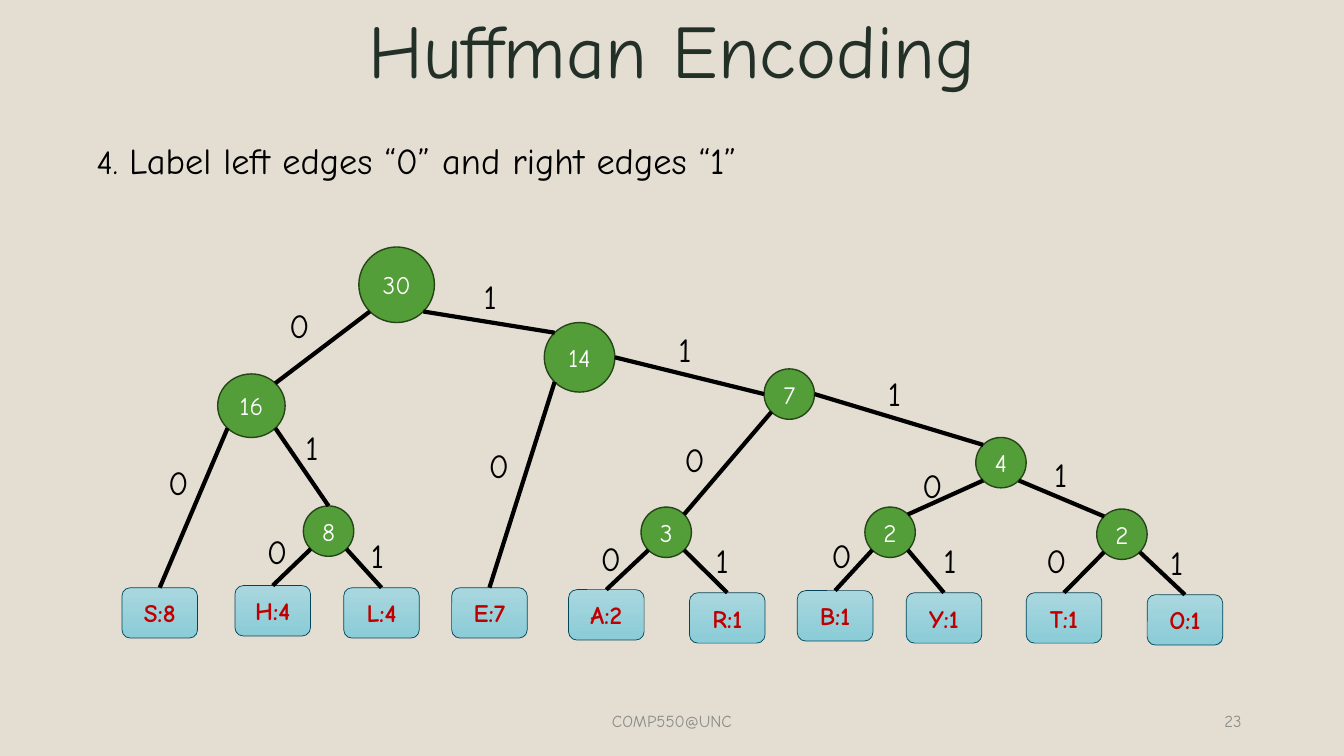
from lxml.etree import SubElement
from pptx import Presentation
from pptx.dml.color import RGBColor
from pptx.enum.shapes import MSO_CONNECTOR as Connector, MSO_SHAPE as Shape
from pptx.enum.text import MSO_ANCHOR as Anchor, PP_ALIGN as Align
from pptx.oxml.ns import qn
from pptx.util import Pt

FONT = "Comic Neue"
BACKGROUND = RGBColor(0xE3, 0xDE, 0xD1)
TITLE = RGBColor(0x22, 0x30, 0x28)
FOOTER = RGBColor(0x8C, 0x8C, 0x8C)
BLACK = RGBColor(0x00, 0x00, 0x00)
WHITE = RGBColor(0xFF, 0xFF, 0xFF)
GREEN = RGBColor(0x54, 0x9E, 0x39)
DARK_GREEN = RGBColor(0x25, 0x45, 0x19)
LEAF_TOP = RGBColor(0xAA, 0xD7, 0xDF)
LEAF_BOTTOM = RGBColor(0x8A, 0xCC, 0xD7)
LEAF_LINE = RGBColor(0x04, 0x44, 0x58)
RED = RGBColor(0xC0, 0x00, 0x00)

# Leaves: symbol with its count -> left, top
LEAVES = {
    "S:8": (87.1, 419.8), "H:4": (167.8, 418.3), "L:4": (245.5, 419.8),
    "E:7": (322.6, 419.8), "A:2": (406.1, 421.2), "R:1": (492.5, 423.4),
    "B:1": (569.5, 421.9), "Y:1": (647.3, 423.4), "T:1": (733, 423.4),
    "O:1": (819.4, 424.8),
}

# Inner nodes: merged symbols -> total, left, top, width, height
NODES = {
    "TO": ("2", 783.4, 363.6, 36, 36),
    "BY": ("2", 617.8, 362.2, 36, 36),
    "AR": ("3", 457.9, 362.2, 36, 36),
    "BYTO": ("4", 697, 312.5, 36, 36),
    "ARBYTO": ("7", 545.8, 263.5, 36, 36),
    "HL": ("8", 216.7, 361.4, 36, 36),
    "EARBYTO": ("14", 388.8, 230.4, 50.4, 49.7),
    "SHL": ("16", 155.5, 267.1, 48.2, 45.4),
    "ROOT": ("30", 256.3, 176.4, 54, 54),
}

# Edges: parent, side it leaves, child, side it reaches, bit, label left, label top
EDGES = [
    ("ROOT", "SW", "SHL", "NE", "0", 199.4, 214.6),
    ("ROOT", "SE", "EARBYTO", "NW", "1", 338.4, 193.7),
    ("SHL", "SW", "S:8", "N", "0", 113, 326.2),
    ("SHL", "SE", "HL", "N", "1", 211, 301.7),
    ("HL", "SW", "H:4", "N", "0", 183.6, 375.8),
    ("HL", "SE", "L:4", "N", "1", 257.8, 378.7),
    ("EARBYTO", "SW", "E:7", "N", "0", 342, 314.6),
    ("EARBYTO", "E", "ARBYTO", "W", "1", 477.4, 231.1),
    ("ARBYTO", "SW", "AR", "NE", "0", 481.7, 310.3),
    ("ARBYTO", "E", "BYTO", "NW", "1", 627.1, 262.8),
    ("AR", "SW", "A:2", "N", "0", 421.9, 380.9),
    ("AR", "SE", "R:1", "N", "1", 504, 382.3),
    ("BYTO", "SW", "BY", "NE", "0", 651.6, 328.3),
    ("BYTO", "SE", "TO", "NW", "1", 745.9, 320.4),
    ("BY", "SW", "B:1", "N", "0", 586.8, 378.7),
    ("BY", "SE", "Y:1", "N", "1", 666.7, 382.3),
    ("TO", "SW", "T:1", "N", "0", 740.2, 382.3),
    ("TO", "SE", "O:1", "N", "1", 828.7, 383.8),
]

DIAGONAL = 0.5 ** 0.5
SIDES = {
    "N": (0, -1), "E": (1, 0), "W": (-1, 0),
    "NE": (DIAGONAL, -DIAGONAL), "NW": (-DIAGONAL, -DIAGONAL),
    "SE": (DIAGONAL, DIAGONAL), "SW": (-DIAGONAL, DIAGONAL),
}


def add_run(para, text, size, color, bold=False):
    span = para.add_run()
    span.text = text
    span.font.name = FONT
    span.font.size = Pt(size)
    span.font.bold = bold
    span.font.color.rgb = color
    return span


def add_box(slide, left, top, width, height, align=Align.LEFT,
            anchor=Anchor.TOP, wrap=True):
    box = slide.shapes.add_textbox(Pt(left), Pt(top), Pt(width), Pt(height))
    box.text_frame.word_wrap = wrap
    box.text_frame.vertical_anchor = anchor
    para = box.text_frame.paragraphs[0]
    para.alignment = align
    return para


def add_text_shadow(span):
    effects = SubElement(span.font._element, qn("a:effectLst"))
    span.font._element.find(qn("a:solidFill")).addnext(effects)
    shadow = SubElement(effects, qn("a:outerShdw"), blurRad="38100",
                        dist="38100", dir="2700000", algn="tl")
    color = SubElement(shadow, qn("a:srgbClr"), val="000000")
    SubElement(color, qn("a:alpha"), val="43000")


def add_tree_shape(slide, kind, text, frame, line, weight, color, bold):
    shape = slide.shapes.add_shape(kind, *(Pt(length) for length in frame))
    shape.shadow.inherit = False
    shape.line.color.rgb = line
    shape.line.width = Pt(weight)
    shape.text_frame.word_wrap = False
    shape.text_frame.vertical_anchor = Anchor.MIDDLE
    para = shape.text_frame.paragraphs[0]
    para.alignment = Align.CENTER
    add_run(para, text, 18, color, bold)
    return shape


def add_leaf(slide, text, left, top):
    leaf = add_tree_shape(slide, Shape.ROUNDED_RECTANGLE, text,
                          (left, top, 54, 36), LEAF_LINE, 0.5, RED, True)
    leaf.fill.gradient()
    leaf.fill.gradient_angle = 270
    for stop, color in zip(leaf.fill.gradient_stops, (LEAF_TOP, LEAF_BOTTOM)):
        stop.color.rgb = color
    return leaf


def add_node(slide, total, *frame):
    node = add_tree_shape(slide, Shape.OVAL, total, frame,
                          DARK_GREEN, 1, WHITE, False)
    node.fill.solid()
    node.fill.fore_color.rgb = GREEN
    return node


def side_point(shape, side):
    across, down = SIDES[side]
    return (round(shape.left + shape.width * (1 + across) / 2),
            round(shape.top + shape.height * (1 + down) / 2))


def add_edge(slide, parent, leaving, child, reaching):
    edge = slide.shapes.add_connector(
        Connector.STRAIGHT, *side_point(parent, leaving), *side_point(child, reaching))
    if reaching == "N":
        edge.end_connect(child, 0)
    edge.line.color.rgb = BLACK
    edge.line.width = Pt(3)
    SubElement(edge._element.spPr, qn("a:effectLst"))


def main():
    deck = Presentation()
    deck.slide_width, deck.slide_height = Pt(960), Pt(540)
    slide = deck.slides.add_slide(deck.slide_layouts[6])
    slide.background.fill.solid()
    slide.background.fill.fore_color.rgb = BACKGROUND

    # Title, step and footer
    para = add_box(slide, 66, 2.2, 828, 73.4, Align.CENTER, Anchor.MIDDLE)
    para.line_spacing = 0.9
    add_text_shadow(add_run(para, "Huffman Encoding", 54, TITLE))

    para = add_box(slide, 61.9, 79.2, 860.4, 60.5)
    para.line_spacing = 1.5
    para.space_before = Pt(10)
    add_run(para, "4. ", 24, BLACK)
    add_run(para, "Label left edges “0” and right edges “1”", 26, BLACK)

    para = add_box(slide, 318, 500.5, 324, 28.8, Align.CENTER, Anchor.MIDDLE)
    add_run(para, "COMP550@UNC", 12, FOOTER)
    para = add_box(slide, 678, 500.5, 216, 28.8, Align.RIGHT, Anchor.MIDDLE)
    add_run(para, "23", 12, FOOTER)

    # Leaves and inner nodes
    tree = {text: add_leaf(slide, text, *spot) for text, spot in LEAVES.items()}
    for name, node in NODES.items():
        tree[name] = add_node(slide, *node)

    # Edges and their bits
    for parent, leaving, child, reaching, bit, left, top in EDGES:
        add_edge(slide, tree[parent], leaving, tree[child], reaching)
        width = 29.5 if bit == "0" else 25.2
        add_run(add_box(slide, left, top, width, 36, wrap=False), bit, 24, BLACK)

    deck.save("out.pptx")


if __name__ == "__main__":
    main()
